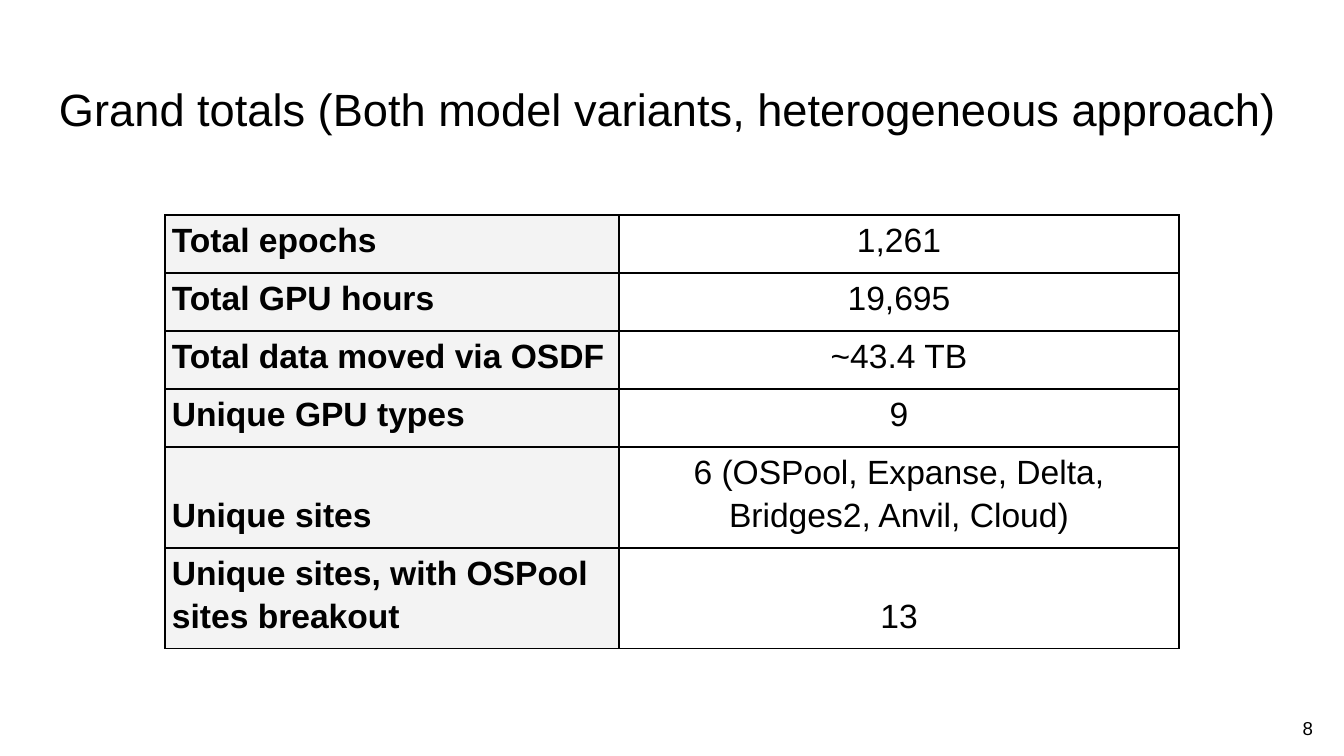
from dataclasses import dataclass

from lxml.etree import SubElement
from pptx import Presentation
from pptx.dml.color import RGBColor
from pptx.enum.text import MSO_ANCHOR, PP_ALIGN
from pptx.oxml.ns import qn
from pptx.util import Pt

TITLE = "Grand totals (Both model variants, heterogeneous approach)"
PAGE_NUMBER = "8"
TOTALS = [
    ("Total epochs", "1,261"),
    ("Total GPU hours", "19,695"),
    ("Total data moved via OSDF", "~43.4 TB"),
    ("Unique GPU types", "9"),
    ("Unique sites", "6 (OSPool, Expanse, Delta, Bridges2, Anvil, Cloud)"),
    ("Unique sites, with OSPool sites breakout", "13"),
]

SLIDE_SIZE = (1344, 756)
TITLE_BOX = (46, 66, 1252, 85)
PAGE_BOX = (1246, 699, 80, 58)
TABLE_ORIGIN = (165, 215)
COLUMN_WIDTHS = (454, 560)
ROW_HEIGHTS = [58] * 4 + [101] * 2
BOX_INSETS = (13, 13, 13, 13)
LABEL_INSETS = (7, 1, 7, 13)
VALUE_INSETS = (1, 1, 1, 13)


@dataclass(frozen=True)
class Theme:
    font: str = "Arial"
    ink: str = "000000"
    paper: str = "FFFFFF"
    label_fill: str = "F3F3F3"
    title_size: float = 24.2
    table_size: float = 18
    page_size: float = 10
    border: float = 0.75


THEME = Theme()


def px(length):
    return round(length * 914400 / 134.4)


def write(frame, text, size, bold=False, align=PP_ALIGN.LEFT, spacing=1.0):
    frame.word_wrap = True
    paragraph = frame.paragraphs[0]
    paragraph.alignment = align
    paragraph.line_spacing = spacing
    run = paragraph.add_run()
    run.text = text
    run.font.name = THEME.font
    run.font.size = Pt(size)
    run.font.bold = bold
    run.font.color.rgb = RGBColor.from_string(THEME.ink)


def set_layout(part, insets, anchor):
    left, top, right, bottom = map(px, insets)
    part.margin_left, part.margin_top = left, top
    part.margin_right, part.margin_bottom = right, bottom
    part.vertical_anchor = anchor


def add_borders(cell):
    properties = cell._tc.get_or_add_tcPr()
    for position, side in enumerate(("a:lnL", "a:lnR", "a:lnT", "a:lnB")):
        line = SubElement(properties, qn(side), w=str(Pt(THEME.border)))
        fill = SubElement(line, qn("a:solidFill"))
        SubElement(fill, qn("a:srgbClr"), val=THEME.ink)
        properties.remove(line)
        properties.insert(position, line)


def add_title(slide):
    title = slide.shapes.title
    title.left, title.top, title.width, title.height = map(px, TITLE_BOX)
    set_layout(title.text_frame, BOX_INSETS, MSO_ANCHOR.MIDDLE)
    write(title.text_frame, TITLE, THEME.title_size)


def add_totals(slide):
    size = (sum(COLUMN_WIDTHS), sum(ROW_HEIGHTS))
    table = slide.shapes.add_table(
        len(TOTALS), len(COLUMN_WIDTHS), *map(px, TABLE_ORIGIN + size)
    ).table
    table.first_row = table.horz_banding = False
    for column, width in zip(table.columns, COLUMN_WIDTHS):
        column.width = px(width)
    for row, height in zip(table.rows, ROW_HEIGHTS):
        row.height = px(height)
    columns = [
        (LABEL_INSETS, THEME.label_fill, True, PP_ALIGN.LEFT),
        (VALUE_INSETS, THEME.paper, False, PP_ALIGN.CENTER),
    ]
    for row, entry in zip(table.rows, TOTALS):
        for cell, text, column in zip(row.cells, entry, columns):
            insets, fill, bold, align = column
            set_layout(cell, insets, MSO_ANCHOR.BOTTOM)
            cell.fill.solid()
            cell.fill.fore_color.rgb = RGBColor.from_string(fill)
            add_borders(cell)
            write(cell.text_frame, text, THEME.table_size,
                  bold=bold, align=align, spacing=1.15)


def add_page_number(slide):
    frame = slide.shapes.add_textbox(*map(px, PAGE_BOX)).text_frame
    set_layout(frame, BOX_INSETS, MSO_ANCHOR.MIDDLE)
    write(frame, PAGE_NUMBER, THEME.page_size, align=PP_ALIGN.RIGHT)


def main():
    deck = Presentation()
    deck.slide_width, deck.slide_height = map(px, SLIDE_SIZE)
    slide = deck.slides.add_slide(deck.slide_layouts.get_by_name("Title Only"))
    add_title(slide)
    add_totals(slide)
    add_page_number(slide)
    deck.save("out.pptx")


if __name__ == "__main__":
    main()
